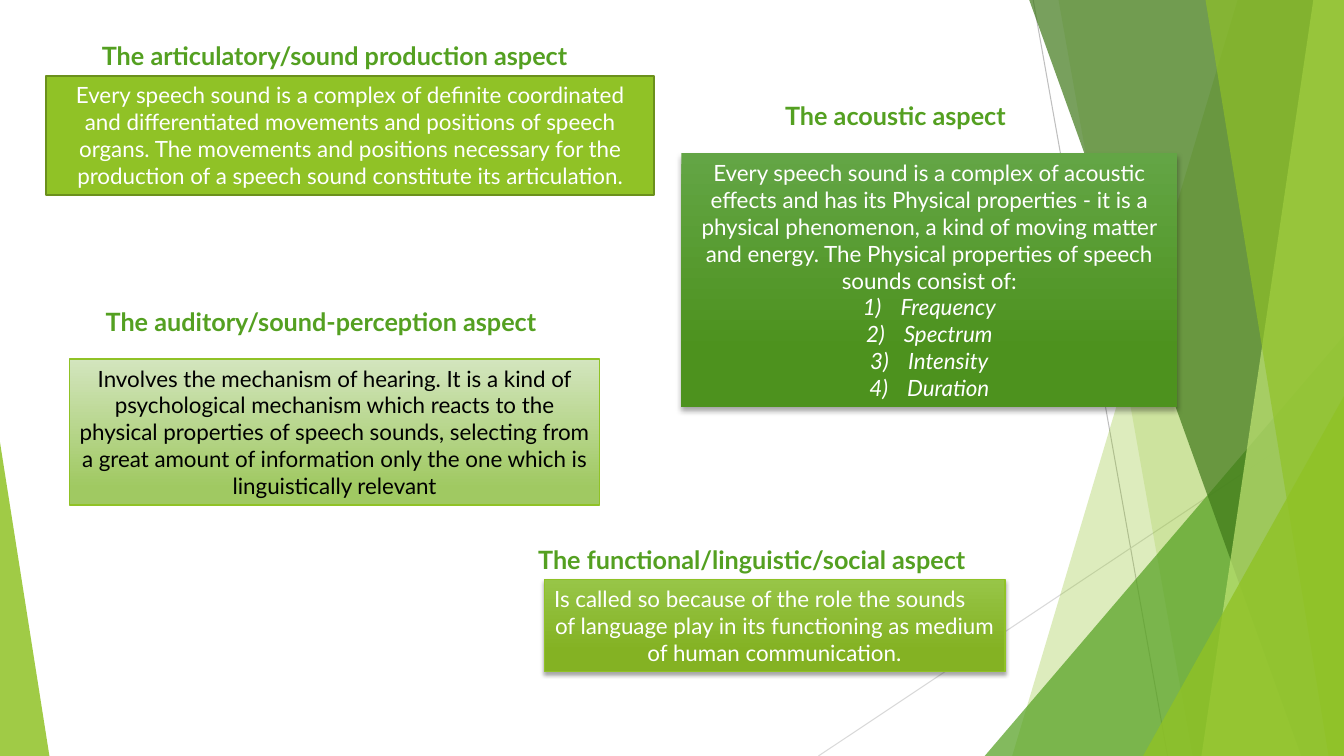
from lxml.etree import SubElement
from pptx import Presentation
from pptx.dml.color import RGBColor
from pptx.enum.shapes import MSO_CONNECTOR, MSO_SHAPE
from pptx.enum.text import MSO_ANCHOR, MSO_AUTO_SIZE, PP_ALIGN
from pptx.oxml.ns import qn
from pptx.util import Pt

W, H = 960, 540
COLORS = {
    "lime": "90C226", "green": "54A021", "forest": "3F7819", "pale": "C0E474",
    "olive": "6B901C", "white": "FFFFFF", "black": "000000",
    "line_dark": "BFBFBF", "line_light": "D9D9D9",
    "acoustic_top": "63A545", "acoustic_end": "4D921E",
    "auditory_top": "D3E5BE", "auditory_end": "A0C962",
    "social_top": "97C547", "social_end": "84B223",
}
HEADING = {"name": "Lato", "size": Pt(18), "bold": True}
BODY = {"name": "Lato", "size": Pt(16), "bold": False}
ITEM = {**BODY, "italic": True}
FRAME = {"auto_size": MSO_AUTO_SIZE.SHAPE_TO_FIT_TEXT,
         "margin_left": Pt(7.2), "margin_right": Pt(7.2),
         "margin_top": Pt(3.6), "margin_bottom": Pt(3.6)}


def rgb(name):
    return RGBColor.from_string(COLORS[name])


def set_all(target, values):
    for key, value in values.items():
        setattr(target, key, value)


class SlideBuilder:
    def __init__(self, slide):
        self.s = slide

    def line(self, x1, y1, x2, y2, color):
        c = self.s.shapes.add_connector(MSO_CONNECTOR.STRAIGHT, Pt(x1), Pt(y1), Pt(x2), Pt(y2))
        c.line.color.rgb = rgb(color)
        c.line.width = Pt(0.75)
        SubElement(c._element.spPr, qn("a:effectLst"))

    def glass(self, sp, color, opacity):
        """Flat see-through fill without outline."""
        sp.shadow.inherit = False
        sp.line.fill.background()
        sp.fill.solid()
        sp.fill.fore_color.rgb = rgb(color)
        clr = sp._element.spPr.find(qn("a:solidFill"))[0]
        SubElement(clr, qn("a:alpha"), val=str(opacity * 1000))

    def wedge(self, top_x, bottom_x, color, opacity):
        """Band from a slanted left side to the right edge of the slide."""
        fb = self.s.shapes.build_freeform(Pt(top_x), Pt(-0.6))
        fb.add_line_segments([(Pt(W), Pt(-0.6)), (Pt(W), Pt(H)), (Pt(bottom_x), Pt(H))])
        self.glass(fb.convert_to_shape(), color, opacity)

    def triangle(self, left, top, width, apex, color, opacity):
        """Right triangle standing on the bottom edge of the slide."""
        sp = self.s.shapes.add_shape(MSO_SHAPE.ISOSCELES_TRIANGLE,
                                     Pt(left), Pt(top), Pt(width), Pt(H - top))
        sp.adjustments[0] = apex
        self.glass(sp, color, opacity)

    def add_text(self, p, text, font, color, align):
        p.alignment = align
        r = p.add_run()
        r.text = text
        set_all(r.font, font)
        r.font.color.rgb = rgb(color)

    def heading(self, left, top, width, text, align=PP_ALIGN.LEFT, sp=None):
        sp = sp or self.s.shapes.add_textbox(0, 0, 0, 0)
        set_all(sp, {"left": Pt(left), "top": Pt(top), "width": Pt(width), "height": Pt(29)})
        tf = sp.text_frame
        set_all(tf, {**FRAME, "word_wrap": False, "vertical_anchor": MSO_ANCHOR.TOP})
        self.add_text(tf.paragraphs[0], text, HEADING, "green", align)

    def box(self, left, top, width, height, paragraphs, fill, color="white",
            outline=None, shadow=None):
        """Text rectangle; fill is a colour or (top, end, end position)."""
        sp = self.s.shapes.add_shape(MSO_SHAPE.RECTANGLE, Pt(left), Pt(top), Pt(width), Pt(height))
        sp.shadow.inherit = False
        if isinstance(fill, str):
            sp.fill.solid()
            sp.fill.fore_color.rgb = rgb(fill)
        else:
            sp.fill.gradient()
            sp.fill.gradient_angle = 270
            for stop, name, pos in zip(sp.fill.gradient_stops, fill, (0, fill[2])):
                stop.color.rgb = rgb(name)
                stop.position = pos
        if outline:
            sp.line.color.rgb = rgb(outline[0])
            sp.line.width = Pt(outline[1])
        else:
            sp.line.fill.background()
        if shadow:
            self.drop_shadow(sp, *shadow)
        tf = sp.text_frame
        set_all(tf, {**FRAME, "word_wrap": True, "vertical_anchor": MSO_ANCHOR.MIDDLE})
        for i, (text, font, align) in enumerate(paragraphs):
            p = tf.add_paragraph() if i else tf.paragraphs[0]
            self.add_text(p, text, font, color, align)
            if font is ITEM:
                self.number(p)

    def drop_shadow(self, sp, blur, dist):
        effects = sp._element.spPr.find(qn("a:effectLst"))
        outer = SubElement(effects, qn("a:outerShdw"), blurRad=str(Pt(blur)), dist=str(Pt(dist)),
                           dir="5400000", rotWithShape="0")
        clr = SubElement(outer, qn("a:srgbClr"), val=COLORS["black"])
        SubElement(clr, qn("a:alpha"), val="35000")

    def number(self, p):
        pPr = p._p.get_or_add_pPr()
        pPr.set("marL", str(Pt(27)))
        pPr.set("indent", str(Pt(-27)))
        SubElement(pPr, qn("a:buFont"), typeface="+mj-lt")
        SubElement(pPr, qn("a:buAutoNum"), type="arabicParenR")


def main():
    prs = Presentation()
    prs.slide_width, prs.slide_height = Pt(W), Pt(H)
    s = prs.slides.add_slide(prs.slide_layouts[5])
    b = SlideBuilder(s)
    center, left = PP_ALIGN.CENTER, PP_ALIGN.LEFT

    # Faceted background
    b.line(738, 0, 834, H, "line_dark")
    b.line(W, 290, 584.6, H, "line_light")
    b.wedge(884.2, 723, "lime", 30)
    b.wedge(756, 851.8, "lime", 20)
    b.triangle(703.4, 239.8, 256.6, 1, "green", 72)
    b.wedge(735, 929.5, "forest", 70)
    b.wedge(938.2, 858.2, "pale", 70)
    b.wedge(861, 949, "lime", 65)
    b.triangle(816.5, 283, 143.5, 1, "lime", 80)
    b.triangle(0, 316, 35.3, 0, "lime", 85)

    # Articulatory aspect
    b.box(33.1, 54, 434.2, 85, [
        ("Every speech sound is a complex of definite coordinated and differentiated movements "
         "and positions of speech organs. The movements and positions necessary for the "
         "production of a speech sound constitute its articulation.", BODY, center)],
        "lime", outline=("olive", 1.5))
    b.heading(54.7, 25.2, 368.6, "The articulatory/sound production aspect", center, s.shapes.title)

    # Acoustic aspect
    b.heading(553.7, 68.4, 182.9, "The acoustic aspect")
    properties = ("Frequency", "Spectrum", "Intensity", "Duration")
    b.box(486.7, 109.4, 354.2, 181.4, [
        ("Every speech sound is a complex of acoustic effects and has its Physical properties - "
         "it is a physical phenomenon, a kind of moving matter and energy. The Physical "
         "properties of speech sounds consist of:", BODY, center),
        *((name, ITEM, center) for name in properties)],
        ("acoustic_top", "acoustic_end", 0.78), shadow=(4, 3))

    # Auditory aspect
    b.heading(68.4, 215.3, 341.3, "The auditory/sound-perception aspect")
    b.box(49.7, 256.3, 378.7, 104.4, [
        ("Involves the mechanism of hearing. It is a kind of psychological mechanism which "
         "reacts to the physical properties of speech sounds, selecting from a great amount of "
         "information only the one which is linguistically relevant", BODY, center)],
        ("auditory_top", "auditory_end", 0.88), "black", outline=("lime", 1))

    # Functional aspect
    b.heading(377.3, 385.2, 337.7, "The functional/linguistic/social aspect")
    b.box(388.8, 414, 329, 65.5, [
        ("Is called so because of the role the sounds", BODY, left),
        ("of language play in its functioning as medium of human communication.", BODY, center)],
        ("social_top", "social_end", 0.78), outline=("lime", 1), shadow=(3, 2))

    prs.save("out.pptx")


if __name__ == "__main__":
    main()
